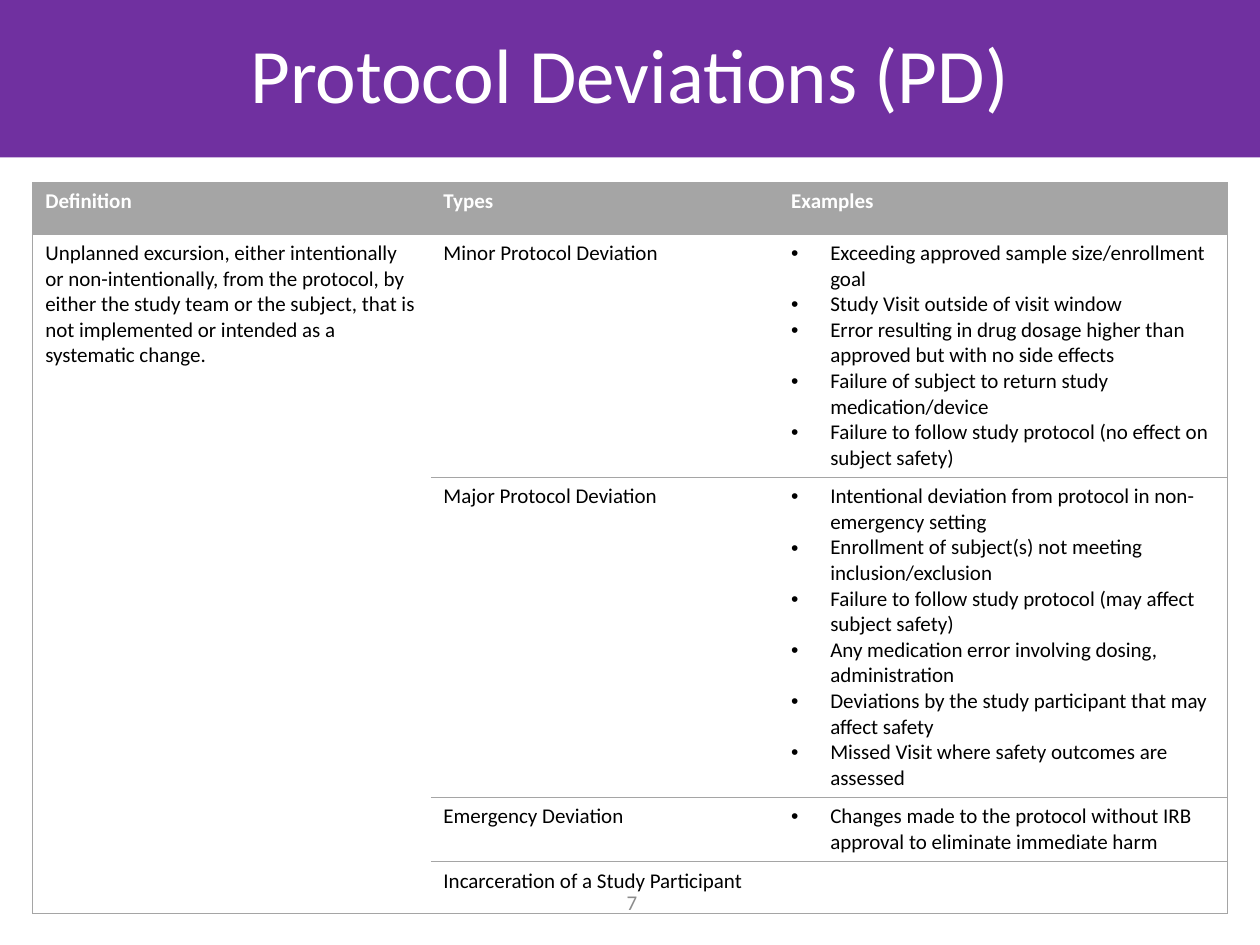
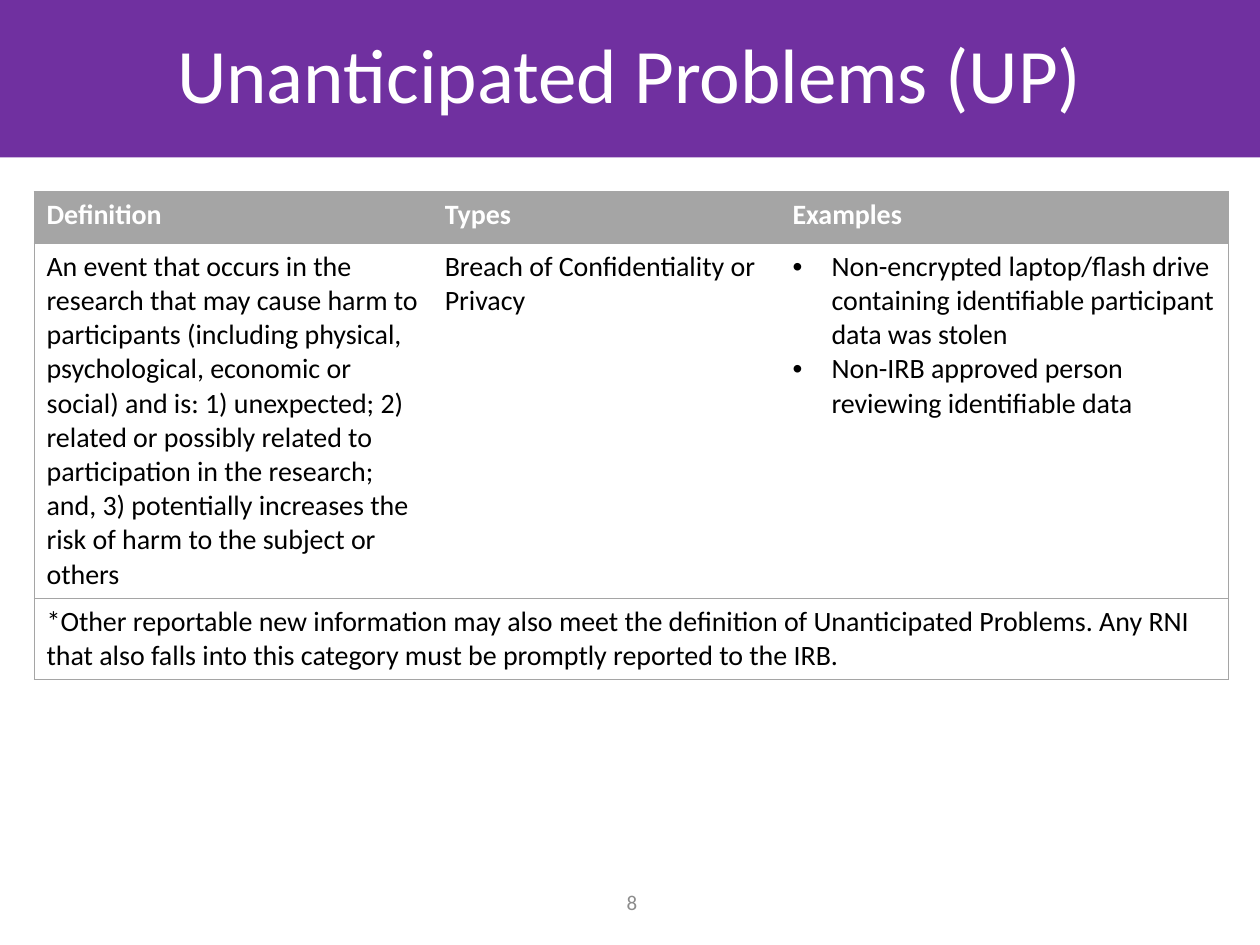
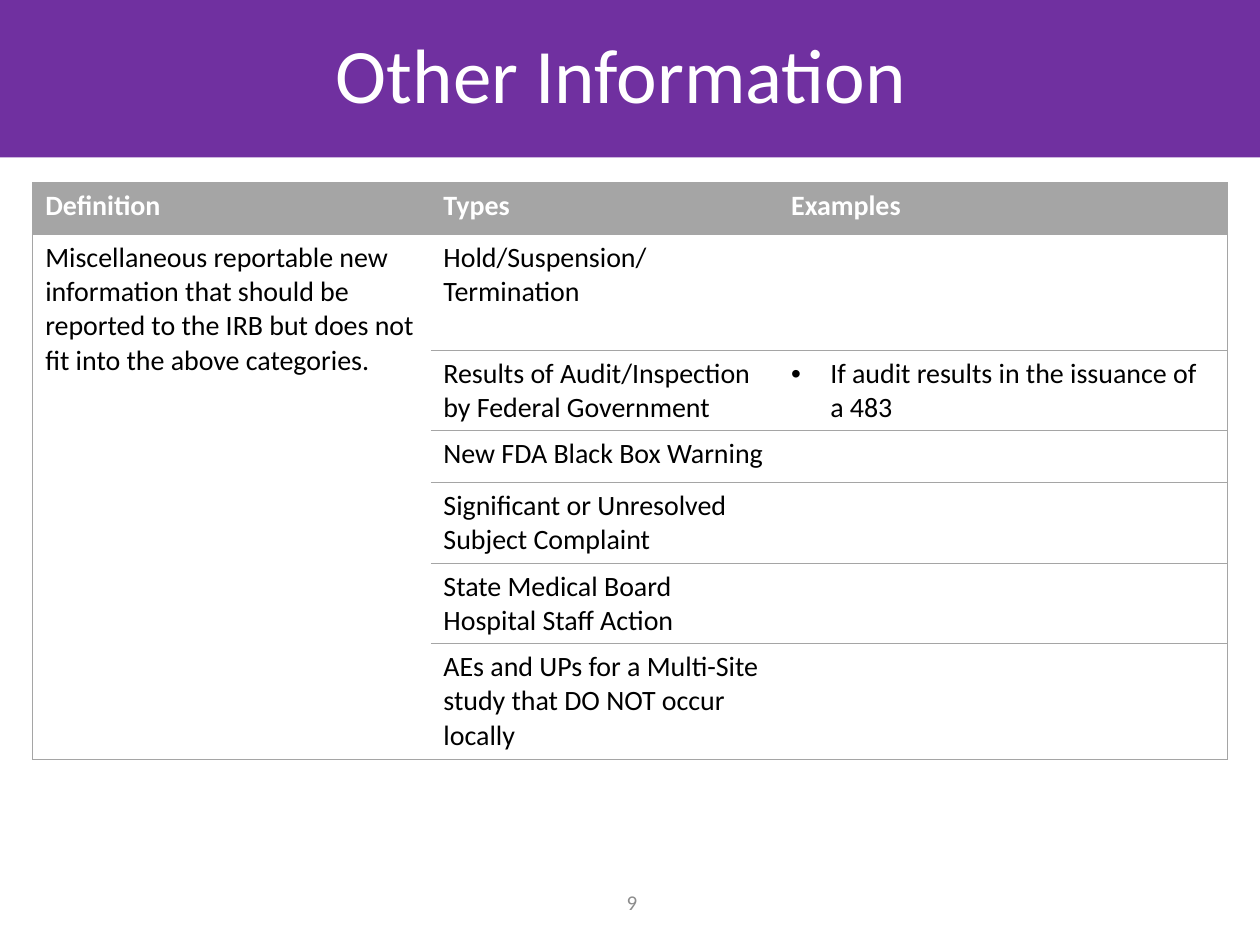
import pptx
import pptx.util
import pptx.dml.color
import pptx.enum.shapes
import pptx.enum.text
import pptx.oxml.ns
import lxml.etree

Inches = pptx.util.Inches
Pt = pptx.util.Pt

PURPLE, GREY, NUMBER_GREY, WHITE, BLACK = "7030A0", "A5A5A5", "8C8C8C", "FFFFFF", "000000"
FONT = "Calibri"
HEADER = ("Definition", "Types", "Examples")
COLUMN_WIDTHS = (3.16, 2.76, 3.56)
INDENT = 0.31

SLIDES = [
    {
        "title": "Protocol Deviations (PD)",
        "number": 7,
        "at": (0.26, 1.45),
        "size": 12,
        "heights": (0.41, 1.93, 2.54, 0.51, 0.41),
        "merge": ((1, 0), (4, 0)),
        "rows": [
            ("Unplanned excursion, either intentionally or non-intentionally, from the protocol, "
             "by either the study team or the subject, that is not implemented or intended as a "
             "systematic change.",
             "Minor Protocol Deviation",
             ["Exceeding approved sample size/enrollment goal",
              "Study Visit outside of visit window",
              "Error resulting in drug dosage higher than approved but with no side effects",
              "Failure of subject to return study medication/device",
              "Failure to follow study protocol (no effect on subject safety)"]),
            ("", "Major Protocol Deviation",
             ["Intentional deviation from protocol in non-emergency setting",
              "Enrollment of subject(s) not meeting inclusion/exclusion",
              "Failure to follow study protocol (may affect subject safety)",
              "Any medication error involving dosing, administration",
              "Deviations by the study participant that may affect safety",
              "Missed Visit where safety outcomes are assessed"]),
            ("", "Emergency Deviation",
             ["Changes made to the protocol without IRB approval to eliminate immediate harm"]),
            ("", "Incarceration of a Study Participant", []),
        ],
    },
    {
        "title": "Unanticipated Problems (UP)",
        "number": 8,
        "at": (0.27, 1.52),
        "size": 16,
        "heights": (0.41, 2.82, 0.64),
        "merge": ((2, 0), (2, 2)),
        "rows": [
            ("An event that occurs in the research that may cause harm to participants (including "
             "physical, psychological, economic or social) and is: 1) unexpected; 2) related or "
             "possibly related to participation in the research; and, 3) potentially increases "
             "the risk of harm to the subject or others",
             "Breach of Confidentiality or Privacy",
             ["Non-encrypted laptop/flash drive containing identifiable participant data was stolen",
              "Non-IRB approved person reviewing identifiable data"]),
            ("*Other reportable new information may also meet the definition of Unanticipated "
             "Problems. Any RNI that also falls into this category must be promptly reported to "
             "the IRB.", "", []),
        ],
    },
    {
        "title": "Other Information ",
        "number": 9,
        "at": (0.26, 1.45),
        "size": 16,
        "heights": (0.41, 0.92, 0.64, 0.41, 0.64, 0.64, 0.92),
        "merge": ((1, 0), (6, 0)),
        "rows": [
            ("Miscellaneous reportable new information that should be reported to the IRB but "
             "does not fit into the above categories.",
             "Hold/Suspension/Termination", []),
            ("", "Results of Audit/Inspection by Federal Government",
             ["If audit results in the issuance of a 483"]),
            ("", "New FDA Black Box Warning", []),
            ("", "Significant or Unresolved Subject Complaint", []),
            ("", "State Medical Board Hospital Staff Action", []),
            ("", "AEs and UPs for a Multi-Site study that DO NOT occur locally", []),
        ],
    },
]


def rgb(value):
    return pptx.dml.color.RGBColor.from_string(value)


def add_run(p, text, size, color, bold=False):
    r = p.add_run()
    r.text = text
    r.font.name = FONT
    r.font.size = Pt(size)
    r.font.bold = bold
    r.font.color.rgb = rgb(color)


def sub(parent, tag, **attributes):
    return lxml.etree.SubElement(parent, pptx.oxml.ns.qn(tag), **attributes)


def add_bullet(p):
    pPr = p._p.get_or_add_pPr()
    pPr.set("marL", str(Inches(INDENT)))
    pPr.set("indent", str(-Inches(INDENT)))
    sub(pPr, "a:buFont", typeface="Arial")
    sub(pPr, "a:buChar", char="•")


def set_borders(cell, sides):
    tcPr = cell._tc.get_or_add_tcPr()
    for side in "LRTB":
        ln = sub(tcPr, f"a:ln{side}", w=str(Pt(0.5)))
        if side in sides:
            sub(sub(ln, "a:solidFill"), "a:srgbClr", val=GREY)
        else:
            sub(ln, "a:noFill")


def visible_sides(cell, row, column, last_row):
    width = cell.span_width if cell.is_merge_origin else 1
    sides = ""
    if column == 0:
        sides += "L"
    if column + width == len(HEADER):
        sides += "R"
    if not cell.is_spanned:
        sides += "T"
    if not cell.is_spanned or row == last_row:
        sides += "B"
    return sides


def add_centered(tf, text, size, color):
    tf.word_wrap = True
    tf.vertical_anchor = pptx.enum.text.MSO_ANCHOR.MIDDLE
    p = tf.paragraphs[0]
    p.alignment = pptx.enum.text.PP_ALIGN.CENTER
    add_run(p, text, size, color)
    return p


def add_title(s, title):
    sp = s.shapes.add_shape(pptx.enum.shapes.MSO_SHAPE.RECTANGLE, 0, 0, Inches(10), Inches(1.25))
    sp.shadow.inherit = False
    sp.fill.solid()
    sp.fill.fore_color.rgb = rgb(PURPLE)
    sp.line.fill.background()
    p = add_centered(sp.text_frame, title, 44, WHITE)
    p.line_spacing = 0.9


def add_number(s, number):
    box = s.shapes.add_textbox(Inches(4.68), Inches(6.96), Inches(0.67), Inches(0.4))
    add_centered(box.text_frame, str(number), 12, NUMBER_GREY)


def fill_cell(cell, content, size, is_header):
    tf = cell.text_frame
    bulleted = isinstance(content, list)
    lines = content if bulleted else [content]
    for i, line in enumerate(lines):
        if not line:
            continue
        p = tf.paragraphs[0] if i == 0 else tf.add_paragraph()
        if bulleted:
            add_bullet(p)
        add_run(p, line, size, WHITE if is_header else BLACK, is_header)
    if is_header:
        cell.fill.solid()
        cell.fill.fore_color.rgb = rgb(GREY)
    else:
        cell.fill.background()


def add_table(s, data):
    rows = [HEADER] + data["rows"]
    left, top = data["at"]
    frame = s.shapes.add_table(len(rows), len(HEADER), Inches(left), Inches(top),
                               Inches(sum(COLUMN_WIDTHS)), Inches(sum(data["heights"])))
    table = frame.table
    table.first_row = False
    table.horz_banding = False
    for column, width in zip(table.columns, COLUMN_WIDTHS):
        column.width = Inches(width)
    for row, height in zip(table.rows, data["heights"]):
        row.height = Inches(height)
    start, end = data["merge"]
    table.cell(*start).merge(table.cell(*end))
    for i, row in enumerate(rows):
        for j, content in enumerate(row):
            cell = table.cell(i, j)
            set_borders(cell, visible_sides(cell, i, j, len(rows) - 1))
            fill_cell(cell, content, data["size"], i == 0)


def main():
    prs = pptx.Presentation()
    prs.slide_width, prs.slide_height = Inches(10), Inches(7.5)
    for data in SLIDES:
        s = prs.slides.add_slide(prs.slide_layouts[6])
        add_title(s, data["title"])
        add_number(s, data["number"])
        add_table(s, data)
    prs.save("out.pptx")


if __name__ == "__main__":
    main()
